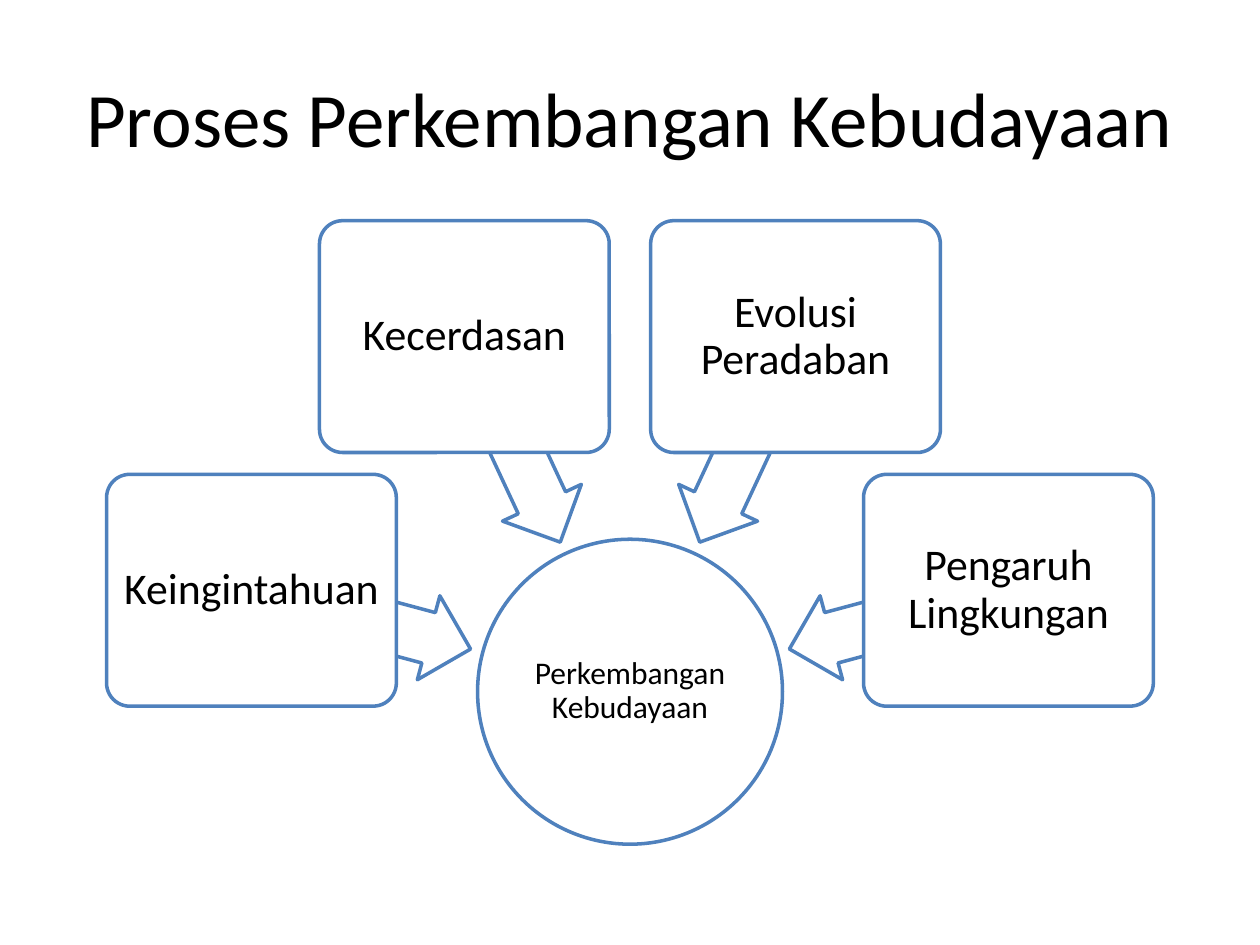
from math import cos, radians, sin

from pptx import Presentation
from pptx.dml.color import RGBColor as RGB
from pptx.enum.shapes import MSO_SHAPE as Kind
from pptx.enum.text import MSO_ANCHOR as Anchor, PP_ALIGN as Align
from pptx.util import Inches, Pt

HUES = {"fill": "FFFFFF", "line": "4F81BD", "text": "000000"}
HUB = (5, 5.49)
REACH = {"arrow": 2.21, "box": 3.11}
CAUSES = ["Keingintahuan", "Kecerdasan", "Evolusi Peradaban", "Pengaruh Lingkungan"]


def draw(kind, mid, width, height):
    x, y = mid
    shape = slide.shapes.add_shape(
        kind, Inches(x - width / 2), Inches(y - height / 2), Inches(width), Inches(height)
    )
    shape.shadow.inherit = False
    shape.fill.solid()
    shape.fill.fore_color.rgb = RGB.from_string(HUES["fill"])
    shape.line.color.rgb = RGB.from_string(HUES["line"])
    shape.line.width = Pt(2)
    return shape


def write(shape, text, size, inset, space):
    frame = shape.text_frame
    frame.word_wrap = True
    frame.vertical_anchor = Anchor.MIDDLE
    frame.margin_left = frame.margin_right = Inches(inset)
    frame.margin_top = frame.margin_bottom = Inches(inset)
    para = frame.paragraphs[0]
    para.text = text
    para.alignment = Align.CENTER
    para.line_spacing = space
    para.font.name = "Calibri"
    para.font.size = Pt(size)
    para.font.color.rgb = RGB.from_string(HUES["text"])


deck = Presentation()
deck.slide_width = Inches(10)
deck.slide_height = Inches(7.5)
slide = deck.slides.add_slide(deck.slide_layouts[6])

title = slide.shapes.add_textbox(Inches(0.5), Inches(0.3), Inches(9), Inches(1.25))
write(title, "Proses Perkembangan Kebudayaan", 44, 0.05, 1)

hub = draw(Kind.OVAL, HUB, 2.42, 2.42)
write(hub, "Perkembangan Kebudayaan", 18, 0.01, 0.9)

for i, cause in enumerate(CAUSES):
    angle = 195 + 50 * i
    turn = radians(angle)
    mids = {
        part: (HUB[0] + reach * cos(turn), HUB[1] + reach * sin(turn))
        for part, reach in REACH.items()
    }

    arrow = draw(Kind.LEFT_ARROW, mids["arrow"], 1.8, 0.69)
    arrow.rotation = angle
    arrow.adjustments[0] = 0.6
    arrow.adjustments[1] = 0.5

    box = draw(Kind.ROUNDED_RECTANGLE, mids["box"], 2.3, 1.84)
    box.adjustments[0] = 0.1
    write(box, cause, 25, 0.01, 0.9)

deck.save("out.pptx")
